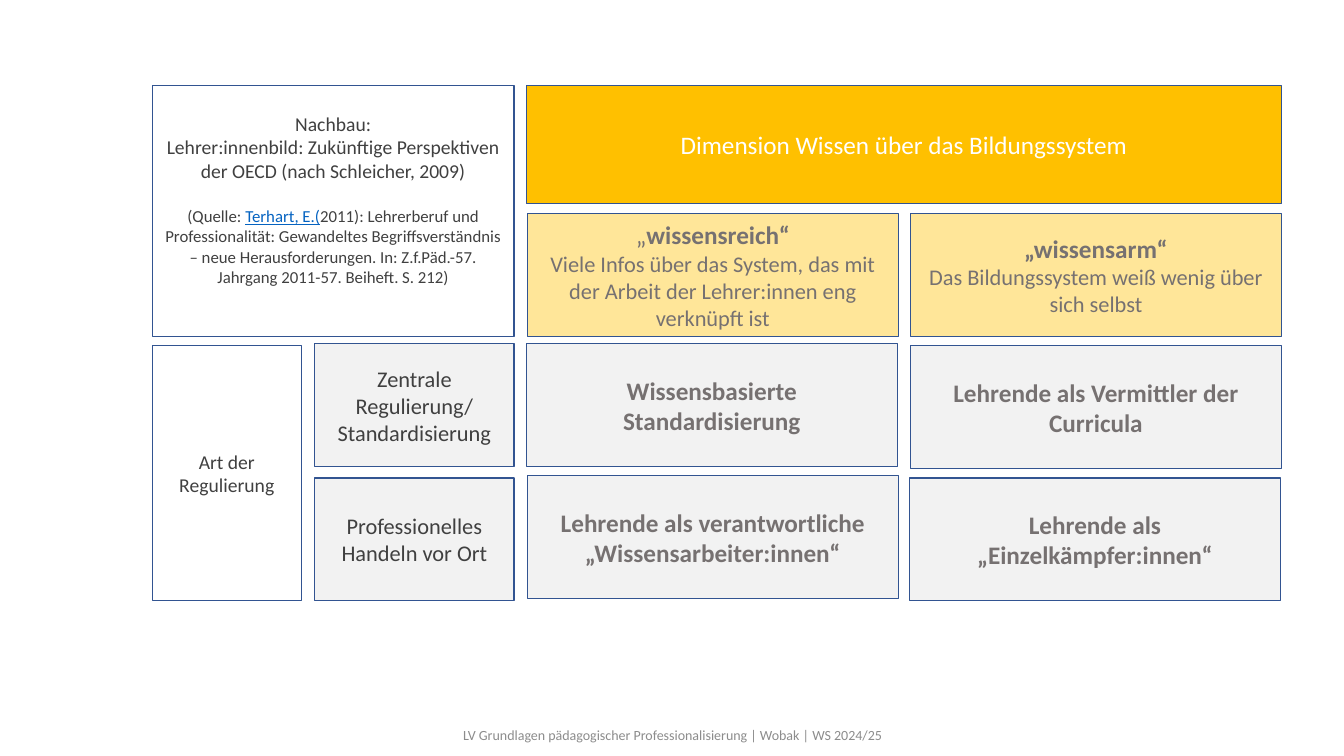
from pptx import Presentation
from pptx.dml.color import RGBColor
from pptx.enum.shapes import MSO_SHAPE
from pptx.enum.text import MSO_ANCHOR, PP_ALIGN
from pptx.util import Inches, Pt

WHITE = RGBColor(0xFF, 0xFF, 0xFF)
AMBER = RGBColor(0xFF, 0xC0, 0x00)
CREAM = RGBColor(0xFF, 0xE6, 0x99)
PALE = RGBColor(0xF2, 0xF2, 0xF2)
NAVY = RGBColor(0x32, 0x54, 0x91)
GRAY = RGBColor(0x76, 0x71, 0x71)
DARK = RGBColor(0x40, 0x40, 0x40)
BLUE = RGBColor(0x05, 0x63, 0xC1)
MUTED = RGBColor(0x8C, 0x8C, 0x8C)

WIDE, HIGH = 3.68, 1.22


class Board:
    font = "Calibri"

    def __init__(self, slide):
        self.slide = slide

    def style(self, run, size, color, bold=False, line=False):
        font = run.font
        font.name = self.font
        font.size = Pt(size)
        font.color.rgb = color
        font.bold = bold
        font.underline = line

    def fill_text(self, frame, paras):
        frame.word_wrap = True
        frame.vertical_anchor = MSO_ANCHOR.MIDDLE
        for i, parts in enumerate(paras):
            para = frame.add_paragraph() if i else frame.paragraphs[0]
            para.alignment = PP_ALIGN.CENTER
            for text, *look in parts:
                start = len(para.runs)
                if start:
                    para.add_run().text = text
                else:
                    para.text = text
                for run in para.runs[start:]:
                    self.style(run, *look)
        return frame

    def box(self, at, fill, *paras):
        shape = self.slide.shapes.add_shape(
            MSO_SHAPE.RECTANGLE, *map(Inches, at))
        shape.shadow.inherit = False
        if fill is None:
            shape.fill.background()
        else:
            shape.fill.solid()
            shape.fill.fore_color.rgb = fill
        shape.line.color.rgb = NAVY
        shape.line.width = Pt(1)
        return self.fill_text(shape.text_frame, paras)

    def label(self, at, *paras):
        area = self.slide.shapes.add_textbox(*map(Inches, at))
        return self.fill_text(area.text_frame, paras)


def main():
    deck = Presentation()
    deck.slide_width = Inches(13.33)
    deck.slide_height = Inches(7.5)
    board = Board(deck.slides.add_slide(deck.slide_layouts[6]))

    board.box((5.22, 0.85, 7.49, 1.17), AMBER,
              [("Dimension Wissen über das Bildungssystem", 18, WHITE)])

    board.box((5.23, 2.12, WIDE, HIGH), CREAM,
              [("„", 18, GRAY), ("wissensreich“", 18, GRAY, True)],
              [("Viele Infos über das System, das mit der Arbeit der "
                "Lehrer:innen eng verknüpft ist", 16, GRAY)])
    board.box((9.03, 2.12, WIDE, HIGH), CREAM,
              [("„wissensarm“", 18, GRAY, True)],
              [("Das Bildungssystem weiß wenig über sich selbst", 16, GRAY)])

    cells = [
        (5.22, 3.41, ["Wissensbasierte Standardisierung"]),
        (9.03, 3.43, ["Lehrende als Vermittler der Curricula"]),
        (5.23, 4.72, ["Lehrende als verantwortliche",
                      "„Wissensarbeiter:innen“"]),
        (9.02, 4.74, ["Lehrende als „Einzelkämpfer:innen“"]),
    ]
    for left, top, lines in cells:
        board.box((left, top, WIDE, HIGH), PALE,
                  *[[(line, 18, GRAY, True)] for line in lines])

    rows = [(3.41, "Zentrale Regulierung/\vStandardisierung"),
            (4.74, "Professionelles Handeln vor Ort")]
    for top, text in rows:
        board.box((3.12, top, 1.98, HIGH), PALE, [(text, 16, DARK)])

    board.box((1.51, 3.43, 1.48, 2.53), None,
              [("Art der Regulierung", 14, DARK)])

    origin = board.box(
        (1.51, 0.85, 3.59, 2.49), None,
        [("Nachbau:\vLehrer:innenbild: Zukünftige Perspektiven der OECD "
          "(nach Schleicher, 2009)", 14, DARK)],
        [("(Quelle: ", 12, DARK),
         ("Terhart, E.(", 12, BLUE, False, True),
         ("2011): Lehrerberuf und Professionalität: Gewandeltes "
          "Begriffsverständnis – neue Herausforderungen. In: Z.f.Päd.-57. "
          "Jahrgang 2011-57. Beiheft. S. 212)", 12, DARK)])
    origin.paragraphs[1].space_before = Pt(17)
    origin.margin_bottom = Inches(0.29)

    footer = board.label(
        (4.42, 7.1, 4.5, 0.4),
        [("LV Grundlagen pädagogischer Professionalisierung | Wobak | "
          "WS 2024/25", 10, MUTED)])
    footer.paragraphs[0].line_spacing = 0.9
    footer.paragraphs[0].space_after = Pt(6)

    deck.save("out.pptx")


if __name__ == "__main__":
    main()
